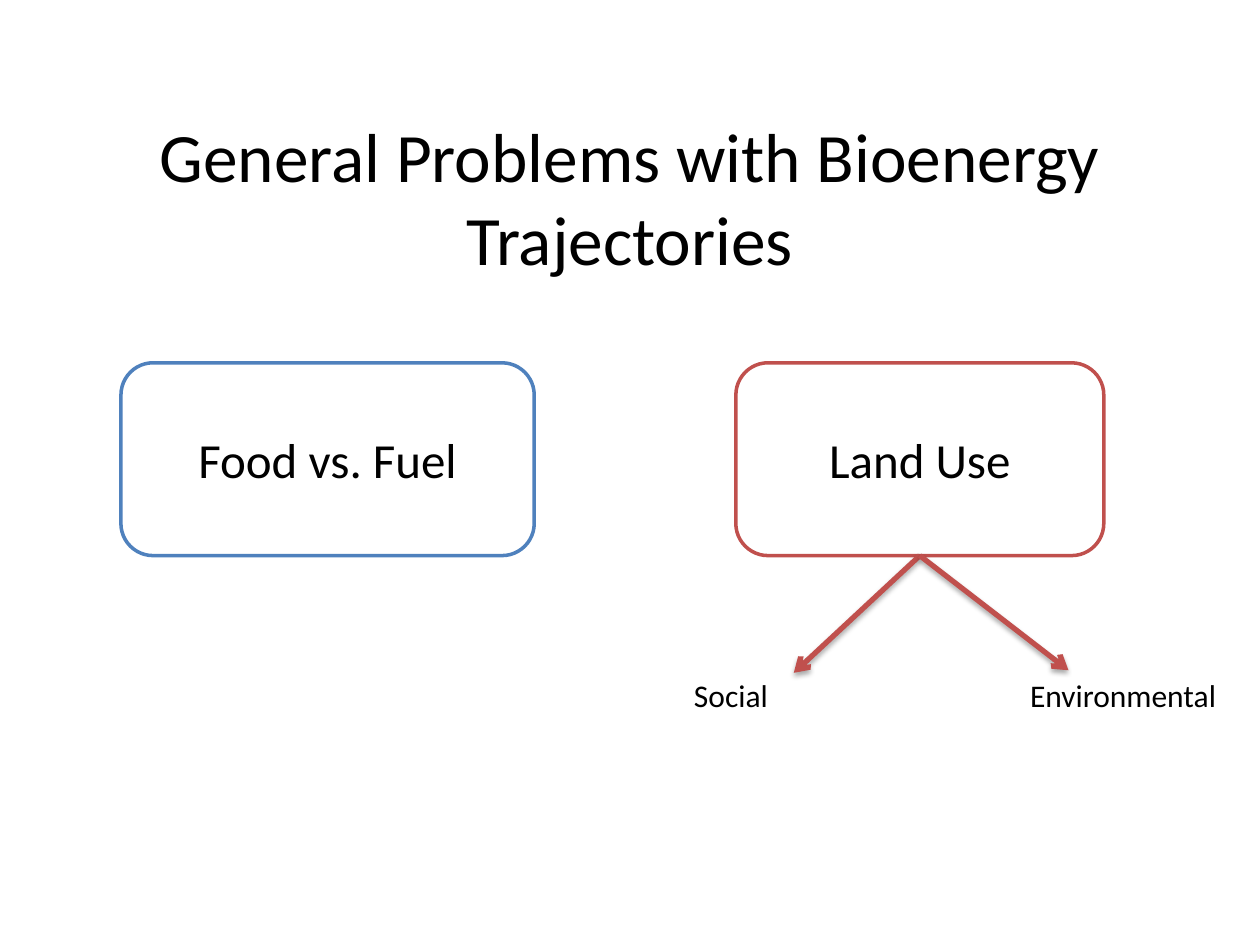
from lxml import etree
from pptx import Presentation
from pptx.dml.color import RGBColor
from pptx.enum import shapes, text
from pptx.oxml import parse_xml
from pptx.util import Inches, Pt

TITLE = "General Problems with Bioenergy Trajectories"
BLUE, RED, BLACK, WHITE = "4F81BD", "C0504D", "000000", "FFFFFF"
FONT = "Calibri"
BOX_TOP, BOX_HEIGHT = 2.88, 1.53
LABEL_TOP, LABEL_HEIGHT = 5.32, 0.4

# wording, left, width, outline colour
PROBLEMS = [
    ("Food vs. Fuel", 0.96, 3.28, BLUE),
    ("Land Use", 5.84, 2.92, RED),
]
# wording, left, width, alignment, arrow tip
LAND_USE_ASPECTS = [
    ("Social", 5.41, 3.06, text.PP_ALIGN.LEFT, (6.3, 5.34)),
    ("Environmental", 7.05, 2.7, text.PP_ALIGN.RIGHT, (8.48, 5.32)),
]

DRAWING = "http://schemas.openxmlformats.org/drawingml/2006/main"
SHADOW = f"""<a:effectLst xmlns:a="{DRAWING}">
  <a:outerShdw blurRad="{Pt(3.1)}" dist="{Pt(1.8)}" dir="5400000" rotWithShape="0">
    <a:srgbClr val="{BLACK}"><a:alpha val="35000"/></a:srgbClr>
  </a:outerShdw>
</a:effectLst>"""


def color(value):
    return RGBColor.from_string(value)


def write(shape, wording, size, align, anchor=text.MSO_ANCHOR.MIDDLE):
    frame = shape.text_frame
    frame.text = wording
    frame.word_wrap = True
    frame.vertical_anchor = anchor
    para = frame.paragraphs[0]
    para.alignment = align
    font = para.runs[0].font
    font.name, font.size = FONT, Pt(size)
    font.color.rgb = color(BLACK)


def add_problem(page, wording, left, width, outline):
    box = page.shapes.add_shape(
        shapes.MSO_SHAPE.ROUNDED_RECTANGLE,
        Inches(left), Inches(BOX_TOP), Inches(width), Inches(BOX_HEIGHT))
    box.shadow.inherit = False
    box.fill.solid()
    box.fill.fore_color.rgb = color(WHITE)
    box.line.color.rgb = color(outline)
    box.line.width = Pt(2)
    write(box, wording, 28, text.PP_ALIGN.CENTER)
    return box


def add_arrow(page, box, tip):
    """Draw a shadowed arrow from the bottom of the box to the tip."""
    x, y = map(Inches, tip)
    arrow = page.shapes.add_connector(
        shapes.MSO_CONNECTOR.STRAIGHT, x, y, x, y)
    arrow.begin_connect(box, 2)
    arrow.line.color.rgb = color(RED)
    arrow.line.width = Pt(3)
    properties = arrow.element.spPr
    outline = properties.find(f"{{{DRAWING}}}ln")
    etree.SubElement(outline, f"{{{DRAWING}}}tailEnd", type="arrow")
    properties.append(parse_xml(SHADOW))


def add_label(page, wording, left, width, align):
    label = page.shapes.add_textbox(
        Inches(left), Inches(LABEL_TOP), Inches(width), Inches(LABEL_HEIGHT))
    write(label, wording, 18, align, text.MSO_ANCHOR.TOP)
    label.text_frame.auto_size = text.MSO_AUTO_SIZE.SHAPE_TO_FIT_TEXT


def main():
    deck = Presentation()
    deck.slide_width, deck.slide_height = Inches(10), Inches(7.5)
    page = deck.slides.add_slide(deck.slide_layouts.get_by_name("Title Only"))

    title = page.shapes.title
    title.left, title.top = Inches(0.5), Inches(0.93)
    title.width, title.height = Inches(9), Inches(1.25)
    write(title, TITLE, 39.6, text.PP_ALIGN.CENTER)

    boxes = [add_problem(page, *problem) for problem in PROBLEMS]
    land_use = boxes[-1]
    for wording, left, width, align, tip in LAND_USE_ASPECTS:
        add_arrow(page, land_use, tip)
        add_label(page, wording, left, width, align)

    deck.save("out.pptx")


if __name__ == "__main__":
    main()
